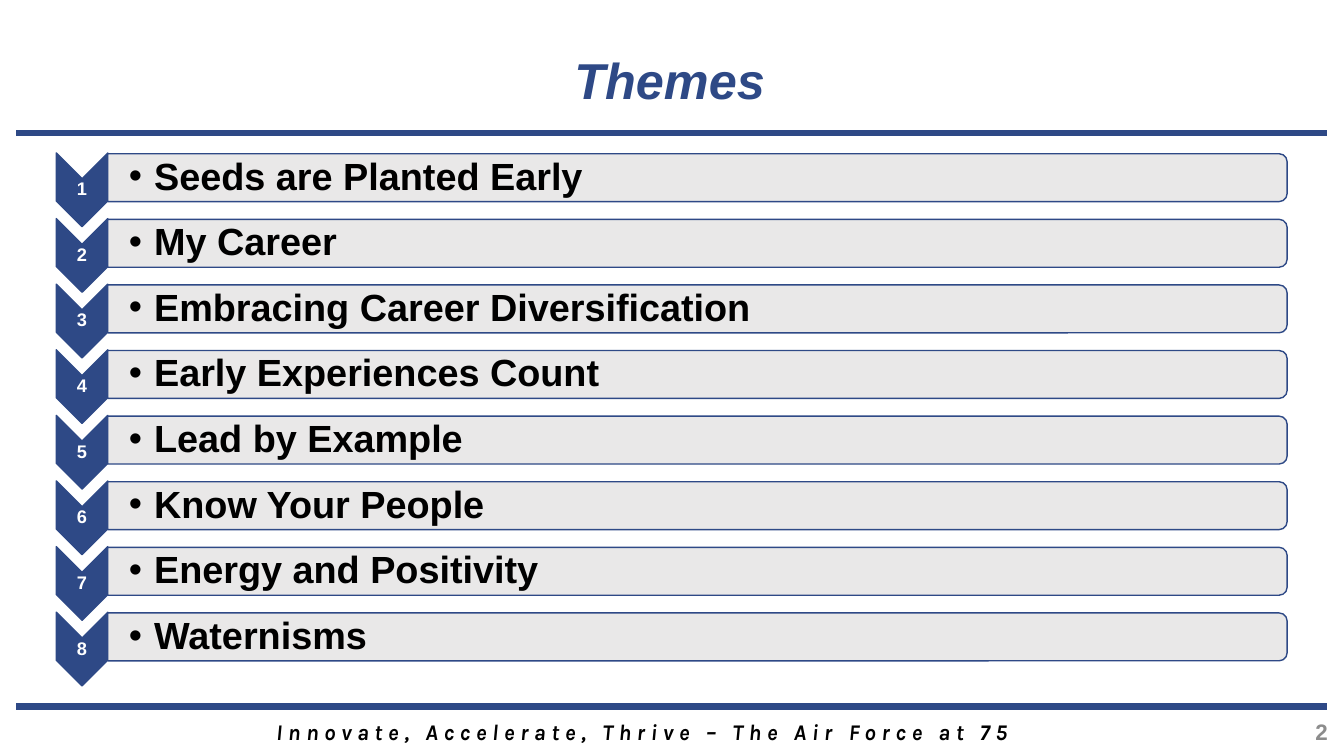
"""Build the Themes slide: eight numbered chevrons with labelled bars."""
from dataclasses import dataclass

from lxml import etree
from pptx import Presentation
from pptx import util as u
from pptx.dml.color import RGBColor
from pptx.enum import shapes, text
from pptx.oxml import ns

TITLE = "Themes"
THEMES = [
    "Seeds are Planted Early",
    "My Career",
    "Embracing Career Diversification",
    "Early Experiences Count",
    "Lead by Example",
    "Know Your People",
    "Energy and Positivity",
    "Waternisms",
]
MOTTO = "Innovate, Accelerate, Thrive – The Air Force at 75"
PAGE_NUMBER = "2"

PAGE_SIZE = (960, 540)
TITLE_BOX = (95, 31.7, 766.8, 55.4)
MOTTO_BOX = (182.9, 512.6, 552.2, 19.4)
NUMBER_BOX = (913.7, 512.6, 41.8, 19.4)
RULES_Y = (95, 504.7)
RULE_X = (11.5, 948.2)
FIRST_TOP, STEP = 109.3, 46.86
CHEVRON_LEFT, CHEVRON_WIDTH, CHEVRON_HEIGHT = 40.2, 36.8, 52.6
BAR_LEFT, BAR_WIDTH, BAR_HEIGHT = 77, 842.4, 34.2


@dataclass(frozen=True)
class Theme:
    """Colours, fonts and sizes."""
    blue: str = "2E4986"
    bar: str = "E7E6E6"
    ink: str = "000000"
    white: str = "FFFFFF"
    gray: str = "8C8C8C"
    font: str = "Arial"
    motto_font: str = "Karla"
    title: int = 36
    label: int = 27
    number: int = 13
    footer: int = 16
    rule: float = 4.5
    outline: float = 1


THEME = Theme()


def points(values):
    """Turn numbers into point lengths."""
    return [u.Pt(value) for value in values]


def write(box, words, size, color, align, insets, font=THEME.font, italic=False, wrap=True, spacing=None):
    """Put one bold line, centred vertically, into a box."""
    frame = box.text_frame
    frame.word_wrap = wrap
    frame.vertical_anchor = text.MSO_ANCHOR.MIDDLE
    frame.margin_left, frame.margin_top, frame.margin_right, frame.margin_bottom = points(insets)
    para = frame.paragraphs[0]
    para.alignment = align
    if spacing:
        para.line_spacing = spacing
    span = para.add_run()
    span.text = words
    span.font.name, span.font.size = font, u.Pt(size)
    span.font.bold, span.font.italic = True, italic
    span.font.color.rgb = RGBColor.from_string(color)
    return para


def add_bullet(para, indent):
    """Give a paragraph a hanging round bullet."""
    properties = para._p.get_or_add_pPr()
    properties.set("marL", str(u.Pt(indent)))
    properties.set("indent", str(-u.Pt(indent)))
    etree.SubElement(properties, ns.qn("a:buFont")).set("typeface", THEME.font)
    etree.SubElement(properties, ns.qn("a:buChar")).set("char", "•")


def add_turned(page, kind, left, top, width, height, fill):
    """Add a shape turned a quarter so that it covers the given area."""
    area = (left + (width - height) / 2, top + (height - width) / 2, height, width)
    shape = page.shapes.add_shape(kind, *points(area))
    shape.rotation = 90
    shape.shadow.inherit = False
    shape.fill.solid()
    shape.fill.fore_color.rgb = RGBColor.from_string(fill)
    shape.line.color.rgb = RGBColor.from_string(THEME.blue)
    shape.line.width = u.Pt(THEME.outline)
    return shape


def add_rule(page, y):
    """Add a thick line across the page."""
    start, end = RULE_X
    rule = page.shapes.add_connector(shapes.MSO_CONNECTOR.STRAIGHT, *points((start, y, end, y)))
    rule.line.color.rgb = RGBColor.from_string(THEME.blue)
    rule.line.width = u.Pt(THEME.rule)
    etree.SubElement(rule._element.spPr, ns.qn("a:effectLst"))


def add_theme(page, index, label):
    """Add one numbered chevron and its bar."""
    kinds, align = shapes.MSO_SHAPE, text.PP_ALIGN
    top = FIRST_TOP + index * STEP
    add_turned(page, kinds.CHEVRON, CHEVRON_LEFT, top, CHEVRON_WIDTH, CHEVRON_HEIGHT, THEME.blue)
    number_area = (CHEVRON_LEFT, top + CHEVRON_WIDTH / 2, CHEVRON_WIDTH, CHEVRON_HEIGHT - CHEVRON_WIDTH)
    number_box = page.shapes.add_textbox(*points(number_area))
    write(number_box, str(index + 1), THEME.number, THEME.white, align.CENTER, (0.7,) * 4, spacing=0.9)

    bar = add_turned(page, kinds.ROUND_2_SAME_RECTANGLE, BAR_LEFT, top + 0.5, BAR_WIDTH, BAR_HEIGHT, THEME.bar)
    color = bar._element.spPr.find(ns.qn("a:solidFill"))[0]
    etree.SubElement(color, ns.qn("a:alpha")).set("val", "90000")
    label_box = page.shapes.add_textbox(*points((BAR_LEFT, top + 2.3, BAR_WIDTH, 31)))
    para = write(label_box, label, THEME.label, THEME.ink, align.LEFT, (15.1, 1.4, 1.4, 1.4), spacing=0.9)
    add_bullet(para, 18)


def main():
    """Build and save the deck."""
    align = text.PP_ALIGN
    insets = (7.2, 0, 7.2, 0)
    deck = Presentation()
    deck.slide_width, deck.slide_height = points(PAGE_SIZE)
    page = deck.slides.add_slide(deck.slide_layouts[5])
    for y in RULES_Y:
        add_rule(page, y)

    title = page.shapes.title
    title.left, title.top, title.width, title.height = points(TITLE_BOX)
    write(title, TITLE, THEME.title, THEME.blue, align.CENTER, insets, italic=True, spacing=0.9)

    for index, label in enumerate(THEMES):
        add_theme(page, index, label)

    motto = page.shapes.add_textbox(*points(MOTTO_BOX))
    para = write(motto, MOTTO, THEME.footer, THEME.ink, align.CENTER, insets, THEME.motto_font, True, False)
    para.runs[0]._r.get_or_add_rPr().set("spc", "400")
    number = page.shapes.add_textbox(*points(NUMBER_BOX))
    write(number, PAGE_NUMBER, THEME.footer, THEME.gray, align.RIGHT, insets, wrap=False)
    deck.save("out.pptx")


if __name__ == "__main__":
    main()
